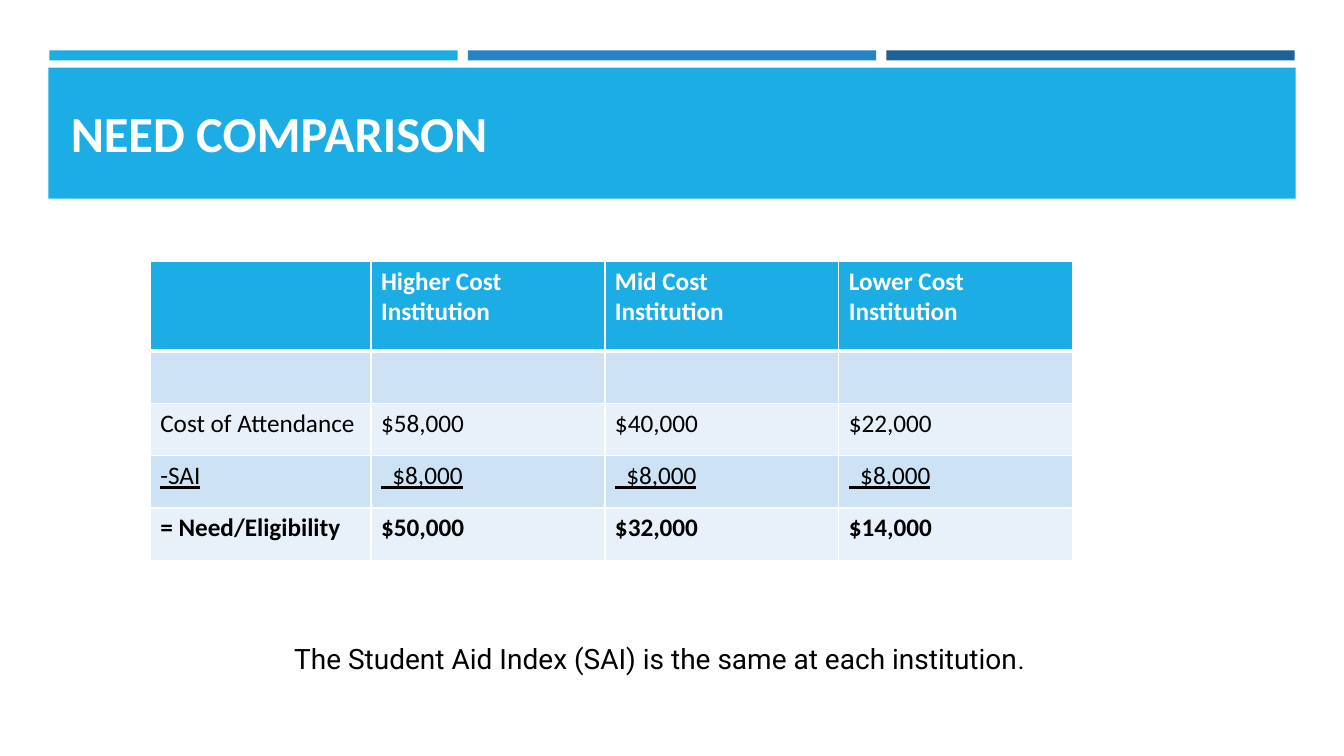
from dataclasses import dataclass

from lxml.etree import SubElement
from pptx import Presentation
from pptx.dml.color import RGBColor
from pptx.enum.shapes import MSO_SHAPE as Preset
from pptx.enum.text import MSO_ANCHOR as Anchor, PP_ALIGN as Align
from pptx.oxml.ns import qn
from pptx.slide import Slide
from pptx.table import _Cell as Cell
from pptx.text.text import _Paragraph as Paragraph
from pptx.util import Inches, Pt

WHITE = RGBColor(0xFF, 0xFF, 0xFF)
BLACK = RGBColor(0x00, 0x00, 0x00)
SKY = RGBColor(0x1C, 0xAD, 0xE4)
BLUE = RGBColor(0x26, 0x83, 0xC6)
NAVY = RGBColor(0x1C, 0x62, 0x94)
BAND_DARK = RGBColor(0xCD, 0xE3, 0xF5)
BAND_LIGHT = RGBColor(0xE8, 0xF1, 0xFA)


@dataclass(frozen=True)
class Box:
    left: float
    top: float
    width: float
    height: float

    def emu(self) -> list[int]:
        return [Inches(n) for n in (self.left, self.top, self.width, self.height)]


@dataclass(frozen=True)
class Style:
    size: float
    color: RGBColor = BLACK
    font: str = "Calibri"
    bold: bool = False
    underline: bool = False


@dataclass(frozen=True)
class Row:
    texts: tuple[str, ...]
    height: float
    fill: RGBColor
    style: Style


BODY = Style(18)
HEADING = Style(18, WHITE, bold=True)
COLUMN_WIDTHS = (2.19, 2.32, 2.32, 2.32)
ROWS = (
    Row(("", "Higher Cost Institution", "Mid Cost\nInstitution", "Lower Cost Institution"),
        0.89, SKY, HEADING),
    Row(("", "", "", ""), 0.52, BAND_DARK, BODY),
    Row(("Cost of Attendance", "$58,000", "$40,000", "$22,000"), 0.52, BAND_LIGHT, BODY),
    Row(("-SAI", "  $8,000", "  $8,000", "  $8,000"), 0.52, BAND_DARK,
        Style(18, underline=True)),
    Row(("= Need/Eligibility", "$50,000", "$32,000", "$14,000"), 0.52, BAND_LIGHT,
        Style(18, bold=True)),
)


def add_run(paragraph: Paragraph, text: str, style: Style) -> None:
    run = paragraph.add_run()
    run.text = text
    font = run.font
    font.name, font.size = style.font, Pt(style.size)
    font.bold, font.underline = style.bold, style.underline
    font.color.rgb = style.color


def add_bar(slide: Slide, box: Box, color: RGBColor) -> None:
    bar = slide.shapes.add_shape(Preset.RECTANGLE, *box.emu())
    bar.shadow.inherit = False
    bar.fill.solid()
    bar.fill.fore_color.rgb = color
    bar.line.fill.background()


def add_line(slide: Slide, box: Box, runs: list[tuple[str, Style]]) -> None:
    frame = slide.shapes.add_textbox(*box.emu()).text_frame
    frame.word_wrap = True
    frame.vertical_anchor = Anchor.MIDDLE
    paragraph = frame.paragraphs[0]
    paragraph.alignment = Align.CENTER
    for text, style in runs:
        add_run(paragraph, text, style)


def set_border(cell: Cell, side: str, points: float) -> None:
    line = SubElement(cell._tc.get_or_add_tcPr(), qn(f"a:ln{side}"), w=str(Pt(points)))
    SubElement(SubElement(line, qn("a:solidFill")), qn("a:srgbClr"), val=str(WHITE))


def fill_cell(cell: Cell, text: str, row: Row, top: float, bottom: float) -> None:
    # Borders come before the fill in the cell properties
    for side, points in (("L", 1), ("R", 1), ("T", top), ("B", bottom)):
        set_border(cell, side, points)
    cell.fill.solid()
    cell.fill.fore_color.rgb = row.fill
    frame = cell.text_frame
    frame.paragraphs[0].font.size = Pt(row.style.size)
    for index, line in enumerate(text.split("\n") if text else []):
        paragraph = frame.add_paragraph() if index else frame.paragraphs[0]
        add_run(paragraph, line, row.style)


def add_cost_table(slide: Slide, left: float, top: float) -> None:
    box = Box(left, top, sum(COLUMN_WIDTHS), sum(row.height for row in ROWS))
    costs = slide.shapes.add_table(len(ROWS), len(COLUMN_WIDTHS), *box.emu()).table
    for column, width in zip(costs.columns, COLUMN_WIDTHS):
        column.width = Inches(width)
    for r, row in enumerate(ROWS):
        costs.rows[r].height = Inches(row.height)
        for c, text in enumerate(row.texts):
            fill_cell(costs.cell(r, c), text, row,
                      top=3 if r == 1 else 1, bottom=3 if r == 0 else 1)


def main() -> None:
    deck = Presentation()
    deck.slide_width, deck.slide_height = Inches(13.33), Inches(7.5)
    slide = deck.slides.add_slide(deck.slide_layouts[6])

    # Three accent bars above the title band
    for index, color in enumerate((SKY, BLUE, NAVY)):
        add_bar(slide, Box(0.49 + index * 4.15, 0.5, 4.05, 0.1), color)
    add_bar(slide, Box(0.48, 0.67, 12.37, 1.3), SKY)

    # Title
    add_line(slide, Box(0.52, 0.91, 4.5, 0.8),
             [("NEED COMPARISON", Style(36, WHITE, bold=True))])

    # Cost table and closing statement
    add_cost_table(slide, 1.49, 2.59)
    add_line(slide, Box(0.51, 6.31, 12.06, 0.45), [
        ("The Student Aid Index (SAI) is the same at each institution",
         Style(20, font="Roboto")),
        (".", Style(18, font="Roboto")),
    ])

    deck.save("out.pptx")


if __name__ == "__main__":
    main()
